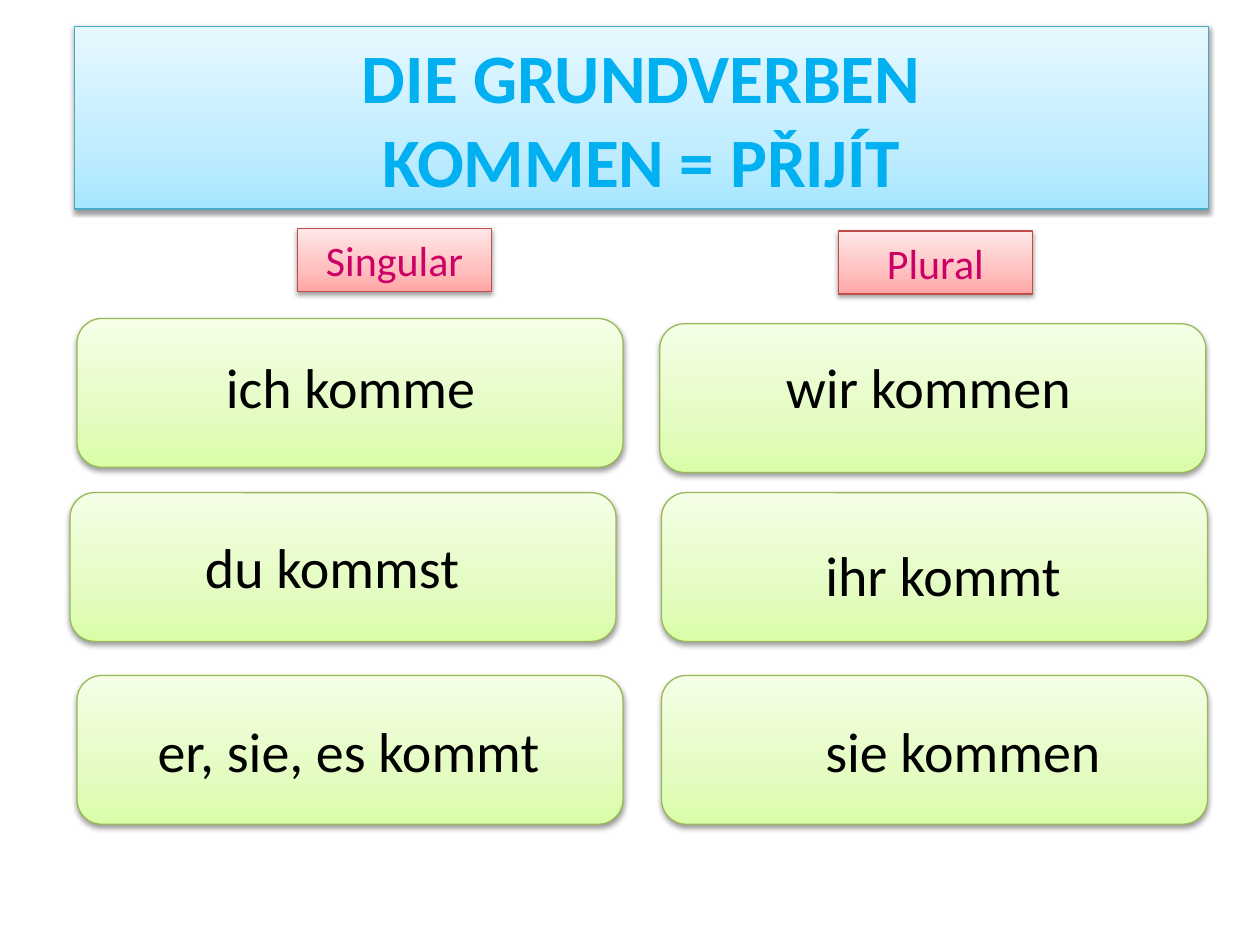
from copy import deepcopy

from pptx import Presentation
from pptx.dml.color import RGBColor
from pptx.enum.shapes import MSO_SHAPE as Shape
from pptx.enum.text import MSO_ANCHOR as Anchor, PP_ALIGN as Align
from pptx.oxml import parse_xml
from pptx.oxml.ns import nsdecls, qn
from pptx.util import Pt

FONT = "Calibri"
COLORS = {"title": "00B0F0", "label": "CC0066", "verb": "000000"}
LINES = {"blue": "46AAC5", "green": "98B955", "red": "BF4C48"}
# Gradient colours from bottom to top, at the stops below
GRADIENTS = {
    "blue": ("A7E6FF", "C1EDFF", "E7F8FF"),
    "green": ("DAFDA7", "E4FCC2", "F5FFE7"),
    "red": ("FFA6A5", "FFC0BF", "FFE7E7"),
}
STOPS = (0, 0.35, 1)
SHADOW = f"""<a:effectLst {nsdecls('a')}>
  <a:outerShdw blurRad="39370" dist="20320" dir="5400000" rotWithShape="0">
    <a:srgbClr val="000000"><a:alpha val="38000"/></a:srgbClr>
  </a:outerShdw>
</a:effectLst>"""

# Each column: label, label box, then verb, card corner,
# text offset inside the card, text box size
COLUMNS = [
    ("Singular", (170, 130.5, 111, 36), [
        ("ich komme", (44, 182), (78, 16), (181, 46)),
        ("du kommst", (40, 281.5), (70, 19.5), (180, 85)),
        ("er, sie, es kommt", (44, 386), (39, 20), (258.5, 85)),
    ]),
    ("Plural", (479, 132, 111, 36), [
        ("wir kommen", (377, 185), (65, 13), (197, 85)),
        ("ihr kommt", (378, 281.5), (86.5, 24), (175, 85)),
        ("sie kommen", (378, 386), (86.5, 20), (189, 85)),
    ]),
]
CARD_SIZE = (312, 85)


def add_panel(page, kind, box, theme):
    """Add a shape with a vertical gradient, thin outline and soft shadow."""
    panel = page.shapes.add_shape(kind, *map(Pt, box))
    panel.fill.gradient()
    panel.fill.gradient_angle = 90
    stop_list = panel.element.spPr.find(qn("a:gradFill")).find(qn("a:gsLst"))
    stop_list.append(deepcopy(stop_list[0]))
    for stop, position, color in zip(panel.fill.gradient_stops, STOPS, GRADIENTS[theme]):
        stop.position = position
        stop.color.rgb = RGBColor.from_string(color)
    panel.line.color.rgb = RGBColor.from_string(LINES[theme])
    panel.line.width = Pt(0.75)
    panel.element.spPr.append(parse_xml(SHADOW))
    return panel


def write(shape, text, size, color, align=Align.CENTER, anchor=Anchor.TOP, bold=False):
    frame = shape.text_frame
    frame.word_wrap = True
    frame.vertical_anchor = anchor
    para = frame.paragraphs[0]
    para.text = text
    para.alignment = align
    para.font.name = FONT
    para.font.size = Pt(size)
    para.font.bold = bold
    para.font.color.rgb = RGBColor.from_string(COLORS[color])


def add_title(page, box):
    panel = add_panel(page, Shape.RECTANGLE, box, "blue")
    write(panel, "DIE GRUNDVERBEN\vKOMMEN = PŘIJÍT", 39.6, "title",
          anchor=Anchor.MIDDLE, bold=True)


def add_verb_card(page, box, verb, offset, size):
    add_panel(page, Shape.ROUNDED_RECTANGLE, box, "green")
    left, top = box[0] + offset[0], box[1] + offset[1]
    text_box = page.shapes.add_textbox(Pt(left), Pt(top), *map(Pt, size))
    write(text_box, verb, 32, "verb", align=Align.LEFT)


def add_column(page, label, label_box, verbs):
    for verb, corner, offset, size in verbs:
        add_verb_card(page, corner + CARD_SIZE, verb, offset, size)
    write(add_panel(page, Shape.RECTANGLE, label_box, "red"), label, 24, "label")


def main():
    deck = Presentation()
    deck.slide_width, deck.slide_height = Pt(720), Pt(540)
    page = deck.slides.add_slide(deck.slide_layouts[6])
    add_title(page, (42.5, 15, 648, 104.5))
    for column in COLUMNS:
        add_column(page, *column)
    deck.save("out.pptx")


if __name__ == "__main__":
    main()
